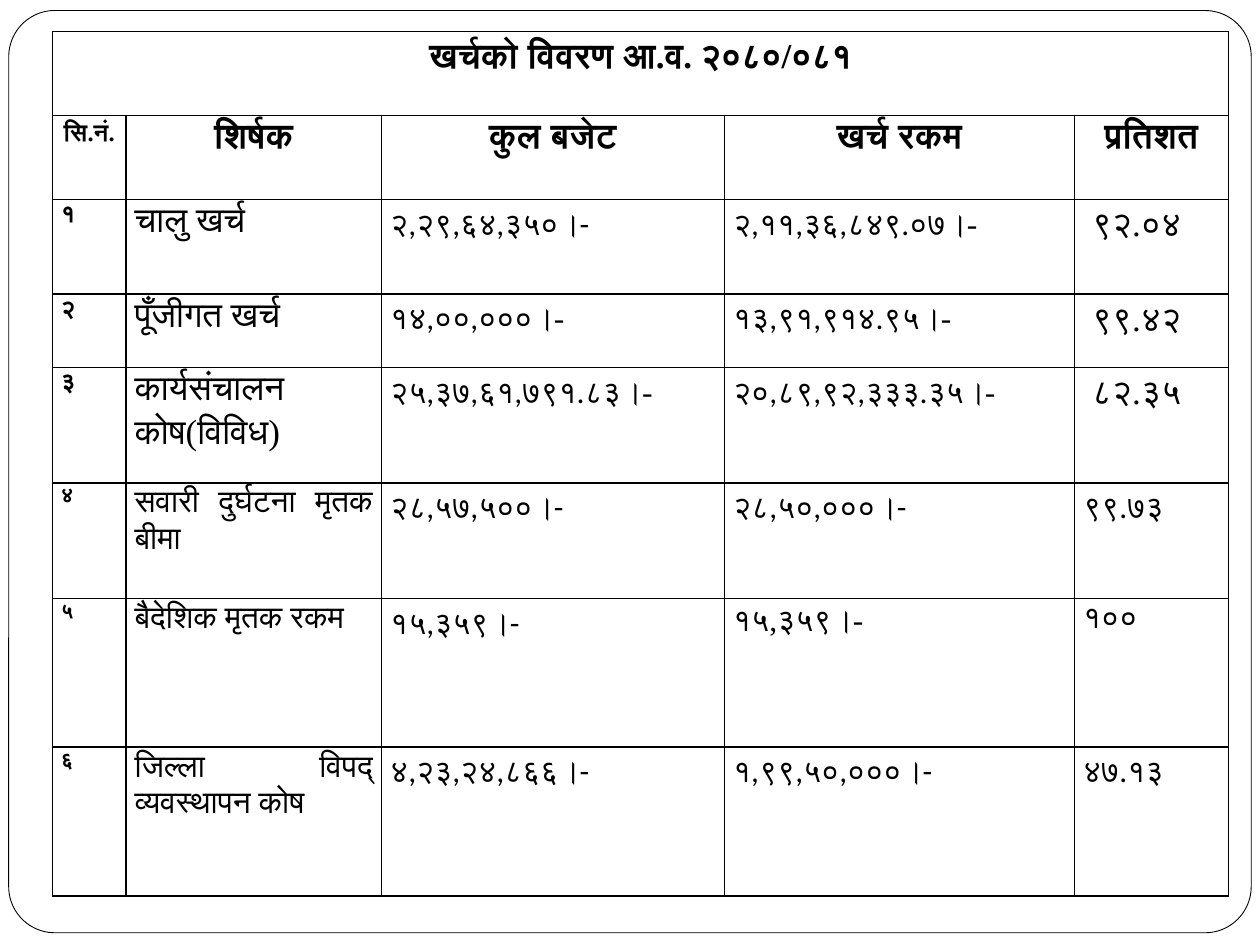
"""Build a slide with a framed expenditure table."""
from lxml.etree import fromstring
from pptx import Presentation
from pptx.dml.color import RGBColor as RGB
from pptx.enum.shapes import MSO_SHAPE as SHAPE
from pptx.enum.text import PP_ALIGN as ALIGN
from pptx.util import Pt

TITLE = "खर्चको विवरण आ.व. २०८०/०८१"
HEADERS = ["सि.नं.", "शिर्षक", "कुल बजेट", "खर्च रकम", "प्रतिशत"]
MAIN_ROWS = [
    ("१", "चालु खर्च", ("२,२९,६४,३५०।-", ""), ("२,११,३६,८४९.", "०७।-"), "९२.०४"),
    ("२", "पूँजीगत खर्च", ("१४,००,", "०००।-"), ("१३,९१,९१४.", "९५।-"), "९९.४२"),
    ("३", "कार्यसंचालन कोष(विविध)", ("२५,३७,६१,७९१.", "८३।-"),
     ("२०,८९,९२,३३३.", "३५।-"), "८२.३५"),
]
FUND_ROWS = [
    ("४", "सवारी दुर्घटना मृतक बीमा", ("२८,५७,५००।-", ""), ("२८,५०,०००।-", ""), "९९.७३"),
    ("५", "बैदेशिक मृतक रकम", ("१५,३५९।-", ""), ("", "१५,३५९।-"), "१००"),
    ("६", "जिल्ला विपद् व्यवस्थापन कोष", ("४,२३,२४,८६६।-", ""),
     ("१,९९,५०,०००।-", ""), "४७.१३"),
]
COL_WIDTHS = [42, 146, 196, 200, 88]
ROW_HEIGHTS = [48, 48, 54, 42, 66, 66, 85, 85]
COLORS = {"ink": "000000", "paper": "FFFFFF"}
SERIF, SANS = "Times New Roman", "Calibri"
INSET = 5
MAIN_STYLE = {"font": SERIF, "number": 14, "text": 20, "indent": 5}
FUND_STYLE = {"font": SANS, "number": 12, "text": 18, "indent": 0}
NS = "http://schemas.openxmlformats.org/drawingml/2006/main"


def add_borders(cell):
    tc_pr = cell._tc.get_or_add_tcPr()
    for i, side in enumerate("LRTB"):
        tc_pr.insert(i, fromstring(
            f'<a:ln{side} xmlns:a="{NS}" w="{Pt(1)}"><a:solidFill>'
            f'<a:srgbClr val="{COLORS["ink"]}"/></a:solidFill></a:ln{side}>'))


def write_cell(cell, runs, size, align, bold=False, indent=0):
    margins = {"margin_left": INSET + indent, "margin_right": INSET,
               "margin_top": 0, "margin_bottom": 0}
    for name, value in margins.items():
        setattr(cell, name, Pt(value))
    p = cell.text_frame.paragraphs[0]
    p.alignment, p.line_spacing = align, 1.15
    for text, font in runs:
        if text:
            r = p.add_run()
            r.text = text
            for name, value in {"name": font, "size": Pt(size), "bold": bold}.items():
                setattr(r.font, name, value)
            r.font.color.rgb = RGB.from_string(COLORS["ink"])


def write_row(table, row, values, style):
    number, label, *amounts, percent = values
    font, size = style["font"], style["text"]
    write_cell(table.cell(row, 0), [(number, font)], style["number"], ALIGN.JUSTIFY, True)
    write_cell(table.cell(row, 1), [(label, font)], size, ALIGN.JUSTIFY)
    for col, parts in enumerate(amounts, 2):
        write_cell(table.cell(row, col), zip(parts, (SANS, SERIF)), 18, ALIGN.LEFT)
    write_cell(table.cell(row, 4), [(percent, font)], size, ALIGN.JUSTIFY,
               indent=style["indent"])


def add_frame(s):
    sp = s.shapes.add_shape(SHAPE.ROUNDED_RECTANGLE, Pt(5), Pt(6), Pt(710), Pt(527))
    sp.adjustments[0] = 0.05
    sp.shadow.inherit = False
    sp.fill.solid()
    sp.fill.fore_color.rgb = RGB.from_string(COLORS["paper"])
    sp.line.color.rgb = RGB.from_string(COLORS["ink"])
    sp.line.width = Pt(0.5)


def add_expense_table(s):
    table = s.shapes.add_table(
        len(ROW_HEIGHTS), len(COL_WIDTHS), Pt(30), Pt(18),
        Pt(sum(COL_WIDTHS)), Pt(sum(ROW_HEIGHTS))).table
    table.first_row = table.horz_banding = False
    for column, width in zip(table.columns, COL_WIDTHS):
        column.width = Pt(width)
    for row, height in zip(table.rows, ROW_HEIGHTS):
        row.height = Pt(height)
    for cell in table.iter_cells():
        cell.fill.background()
        add_borders(cell)

    table.cell(0, 0).merge(table.cell(0, len(COL_WIDTHS) - 1))
    write_cell(table.cell(0, 0), [(TITLE, SERIF)], 20, ALIGN.CENTER, True)
    for col, header in enumerate(HEADERS):
        write_cell(table.cell(1, col), [(header, SERIF)], 20 if col else 14,
                   ALIGN.CENTER, True)
    styled = [(v, MAIN_STYLE) for v in MAIN_ROWS] + [(v, FUND_STYLE) for v in FUND_ROWS]
    for row, (values, style) in enumerate(styled, 2):
        write_row(table, row, values, style)


def main():
    prs = Presentation()
    prs.slide_width, prs.slide_height = Pt(720), Pt(540)
    s = prs.slides.add_slide(prs.slide_layouts[6])
    add_frame(s)
    add_expense_table(s)
    prs.save("out.pptx")


if __name__ == "__main__":
    main()
